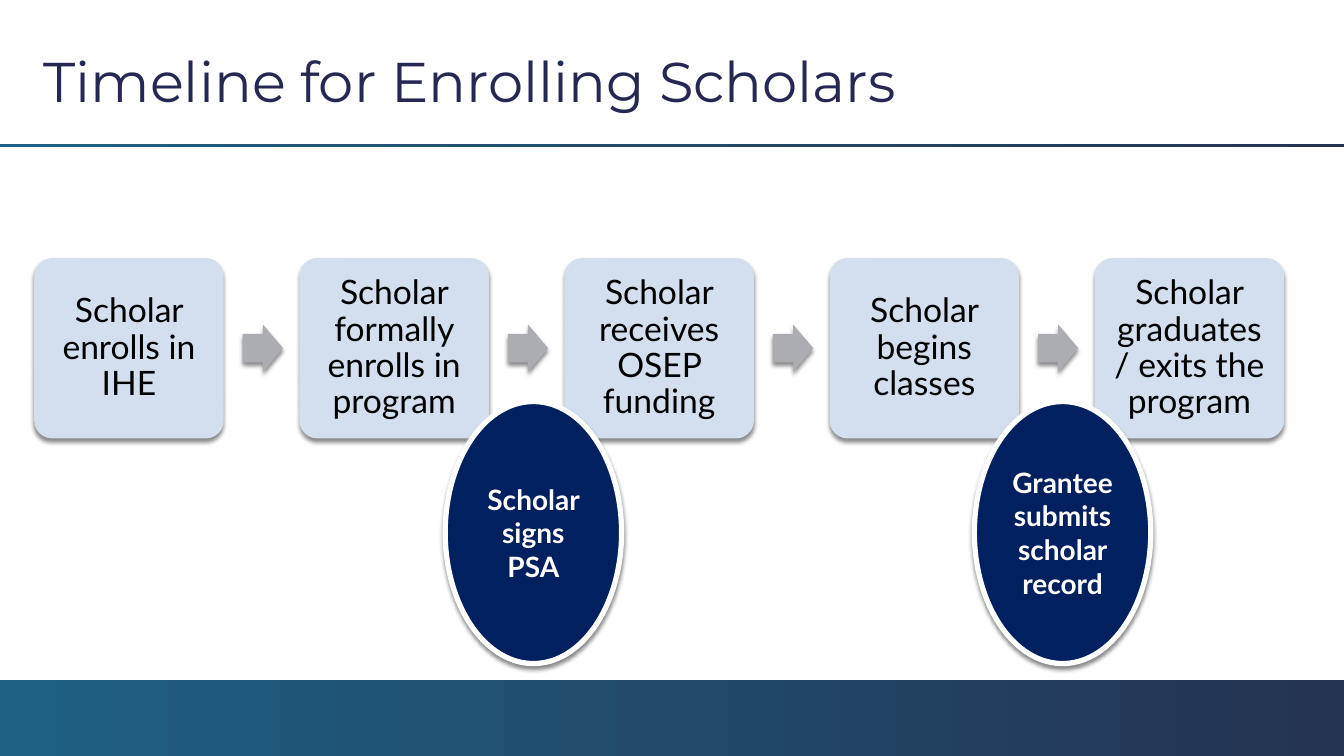
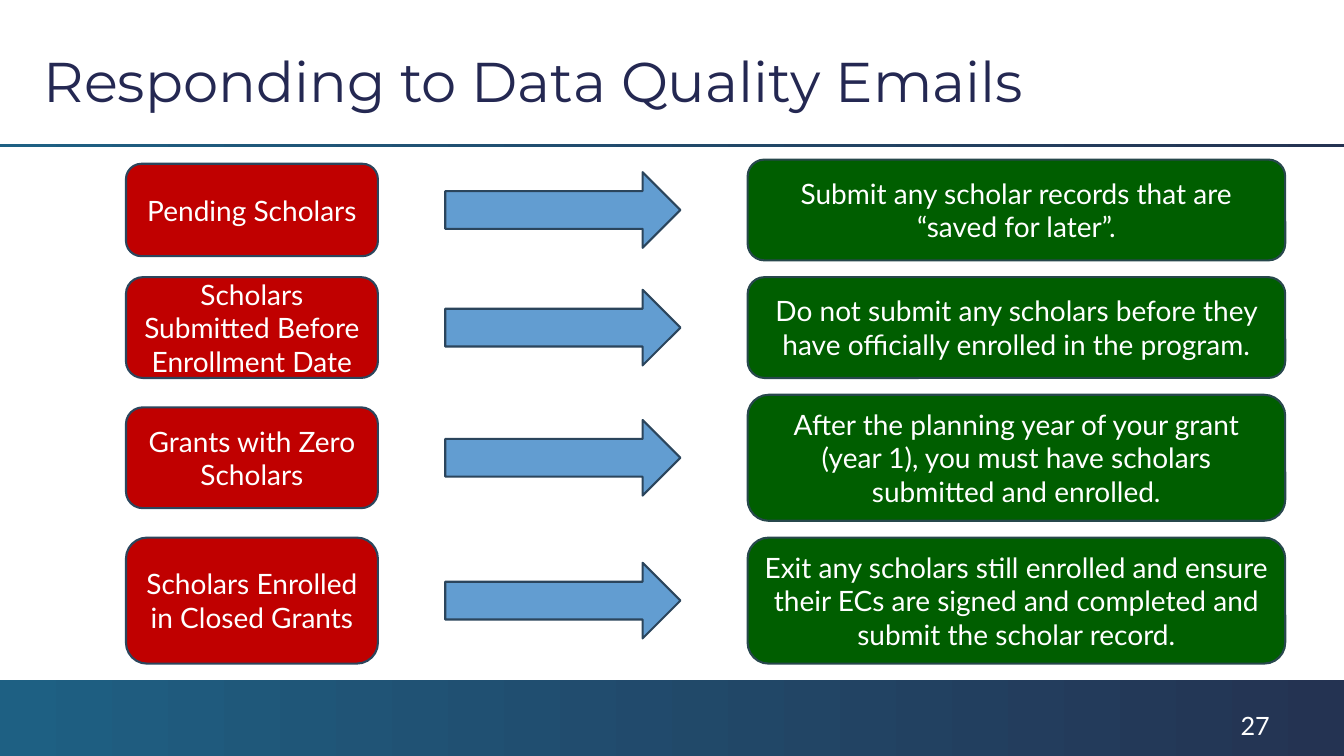
from dataclasses import dataclass
from typing import NamedTuple, Optional

import lxml.etree
import pptx
import pptx.dml.color
import pptx.enum.shapes
import pptx.enum.text
import pptx.oxml.ns
import pptx.util

# Slide size and the grid that all lengths are counted in
SLIDE_WIDTH = pptx.util.Inches(13.33)
SLIDE_HEIGHT = pptx.util.Inches(7.5)
COLUMNS, ROWS = 160, 90

# Shared style
BODY_FONT, TITLE_FONT = "Lato", "Montserrat"
TITLE_COLOR = "242852"
BAND_COLORS = ("1E6083", "243352")
WHITE, BLACK = "FFFFFF", "000000"
STEP_COLOR, STEP_ARROW_COLOR, MILESTONE_COLOR = "D3DFEE", "ACADB3", "002060"
PROBLEM_COLOR, ACTION_COLOR, ROW_ARROW_COLOR = "C00000", "005E00", "629DD1"
OUTLINE_COLOR, ACTION_OUTLINE_COLOR = "2B455C", "27474C"

PRESET = pptx.enum.shapes.MSO_SHAPE
ALIGN = pptx.enum.text.PP_ALIGN
ANCHOR = pptx.enum.text.MSO_ANCHOR


class Area(NamedTuple):
    """A place on the grid, in columns and rows."""
    left: float
    top: float
    width: float
    height: float


@dataclass
class Look:
    fill: str
    line: Optional[str] = None
    line_width: float = 1.5
    shadow: bool = False


@dataclass
class TextStyle:
    size: float
    color: str
    font: str = BODY_FONT
    bold: bool = False
    align: ALIGN = ALIGN.CENTER
    anchor: ANCHOR = ANCHOR.MIDDLE
    line_spacing: float = 1.0


@dataclass
class Milestone:
    after_step: int
    text: str


@dataclass
class Response:
    problem: str
    action: str
    problem_rows: float
    action_rows: float


STEPS = (
    "Scholar enrolls in IHE",
    "Scholar formally enrolls in program",
    "Scholar receives OSEP funding",
    "Scholar begins classes",
    "Scholar graduates/ exits the program",
)
MILESTONES = (
    Milestone(4, "Grantee submits scholar record"),
    Milestone(2, "Scholar signs PSA"),
)
RESPONSES = (
    Response("Pending Scholars",
             "Submit any scholar records that are “saved for later”.", 11, 12),
    Response("Scholars Submitted Before Enrollment Date",
             "Do not submit any scholars before they have officially enrolled "
             "in the program.", 12, 12),
    Response("Grants with Zero Scholars",
             "After the planning year of your grant (year 1), you must have "
             "scholars submitted and enrolled.", 12, 15),
    Response("Scholars Enrolled in Closed Grants",
             "Exit any scholars still enrolled and ensure their ECs are signed "
             "and completed and submit the scholar record.", 15, 15),
)

TITLE_STYLE = TextStyle(40, TITLE_COLOR, TITLE_FONT, align=ALIGN.LEFT)
STEP_STYLE = TextStyle(24, BLACK, line_spacing=0.9)
MILESTONE_STYLE = TextStyle(20, WHITE, bold=True)
ROW_STYLE = TextStyle(20, WHITE)
NUMBER_STYLE = TextStyle(18, WHITE, align=ALIGN.LEFT, anchor=ANCHOR.TOP)


# Helpers
def color(value: str) -> pptx.dml.color.RGBColor:
    return pptx.dml.color.RGBColor.from_string(value)


def to_lengths(area: Area) -> tuple:
    column, row = SLIDE_WIDTH / COLUMNS, SLIDE_HEIGHT / ROWS
    return (round(area.left * column), round(area.top * row),
            round(area.width * column), round(area.height * row))


def write_text(shape, text: str, style: TextStyle) -> None:
    frame = shape.text_frame
    frame.text = text
    frame.word_wrap = True
    frame.auto_size = pptx.enum.text.MSO_AUTO_SIZE.NONE
    frame.vertical_anchor = style.anchor
    for paragraph in frame.paragraphs:
        paragraph.alignment = style.align
        paragraph.line_spacing = style.line_spacing
        for run in paragraph.runs:
            run.font.name = style.font
            run.font.size = pptx.util.Pt(style.size)
            run.font.bold = style.bold
            run.font.color.rgb = color(style.color)


def add_soft_shadow(shape) -> None:
    qn = pptx.oxml.ns.qn
    effects = shape.element.spPr.find(qn("a:effectLst"))
    shadow = lxml.etree.SubElement(
        effects, qn("a:outerShdw"), blurRad=str(pptx.util.Pt(3)),
        dist=str(pptx.util.Pt(2.4)), dir="5400000", rotWithShape="0")
    shade = lxml.etree.SubElement(shadow, qn("a:srgbClr"), val=BLACK)
    lxml.etree.SubElement(shade, qn("a:alpha"), val="45000")


def add_preset(slide, preset: PRESET, area: Area, look: Look):
    shape = slide.shapes.add_shape(preset, *to_lengths(area))
    shape.shadow.inherit = False
    shape.fill.solid()
    shape.fill.fore_color.rgb = color(look.fill)
    if look.line:
        shape.line.color.rgb = color(look.line)
        shape.line.width = pptx.util.Pt(look.line_width)
    else:
        shape.line.fill.background()
    if look.shadow:
        add_soft_shadow(shape)
    return shape


def add_gradient_band(slide, area: Area) -> None:
    band = add_preset(slide, PRESET.RECTANGLE, area, Look(BAND_COLORS[0]))
    band.fill.gradient()
    band.fill.gradient_angle = 0
    for stop, value in zip(band.fill.gradient_stops, BAND_COLORS):
        stop.color.rgb = color(value)


def add_titled_slide(presentation, title: str):
    slide = presentation.slides.add_slide(presentation.slide_layouts[5])
    add_gradient_band(slide, Area(0, 81, COLUMNS, 9))
    add_gradient_band(slide, Area(0, 17.16, COLUMNS, 0.36))
    heading = slide.shapes.title
    (heading.left, heading.top,
     heading.width, heading.height) = to_lengths(Area(4, 3, 152, 13))
    write_text(heading, title, TITLE_STYLE)
    return slide


# Slide with the enrolment timeline
def build_timeline(presentation) -> None:
    slide = add_titled_slide(presentation, "Timeline for Enrolling Scholars")
    first, pitch, top, width, height = 4.08, 31.56, 30.72, 22.56, 21.48
    arrow_width, arrow_height = 4.8, 5.64
    for index, text in enumerate(STEPS):
        left = first + index * pitch
        card = add_preset(slide, PRESET.ROUNDED_RECTANGLE,
                          Area(left, top, width, height),
                          Look(STEP_COLOR, shadow=True))
        card.adjustments[0] = 0.1
        write_text(card, text, STEP_STYLE)
        frame = card.text_frame
        frame.margin_top = frame.margin_bottom = pptx.util.Inches(0.1)
        if index < len(STEPS) - 1:
            arrow = add_preset(
                slide, PRESET.RIGHT_ARROW,
                Area(left + width + 2.26, top + (height - arrow_height) / 2,
                     arrow_width, arrow_height),
                Look(STEP_ARROW_COLOR, shadow=True))
            arrow.adjustments[0] = 0.6

    for milestone in MILESTONES:
        oval = add_preset(slide, PRESET.OVAL,
                          Area(milestone.after_step * 31.5 - 10, 47.8, 21, 31.2),
                          Look(MILESTONE_COLOR, WHITE, 3.75, shadow=True))
        write_text(oval, milestone.text, MILESTONE_STYLE)


# Slide with the problems and what to do about them
def build_responses(presentation) -> None:
    slide = add_titled_slide(presentation, "Responding to Data Quality Emails")
    top, gap, arrow_rows = 19, 2, 9
    for response in RESPONSES:
        middle = top + response.action_rows / 2
        problem = add_preset(
            slide, PRESET.ROUNDED_RECTANGLE,
            Area(15, middle - response.problem_rows / 2, 30, response.problem_rows),
            Look(PROBLEM_COLOR, OUTLINE_COLOR))
        write_text(problem, response.problem, ROW_STYLE)
        add_preset(slide, PRESET.RIGHT_ARROW,
                   Area(53, middle - arrow_rows / 2, 28, arrow_rows),
                   Look(ROW_ARROW_COLOR, OUTLINE_COLOR))
        action = add_preset(slide, PRESET.ROUNDED_RECTANGLE,
                            Area(89, top, 64, response.action_rows),
                            Look(ACTION_COLOR, ACTION_OUTLINE_COLOR))
        write_text(action, response.action, ROW_STYLE)
        top += response.action_rows + gap

    number = slide.shapes.add_textbox(*to_lengths(Area(146.5, 84, 9.36, 3.24)))
    write_text(number, "27", NUMBER_STYLE)


def main() -> None:
    presentation = pptx.Presentation()
    presentation.slide_width = SLIDE_WIDTH
    presentation.slide_height = SLIDE_HEIGHT
    build_timeline(presentation)
    build_responses(presentation)
    presentation.save("out.pptx")


if __name__ == "__main__":
    main()
